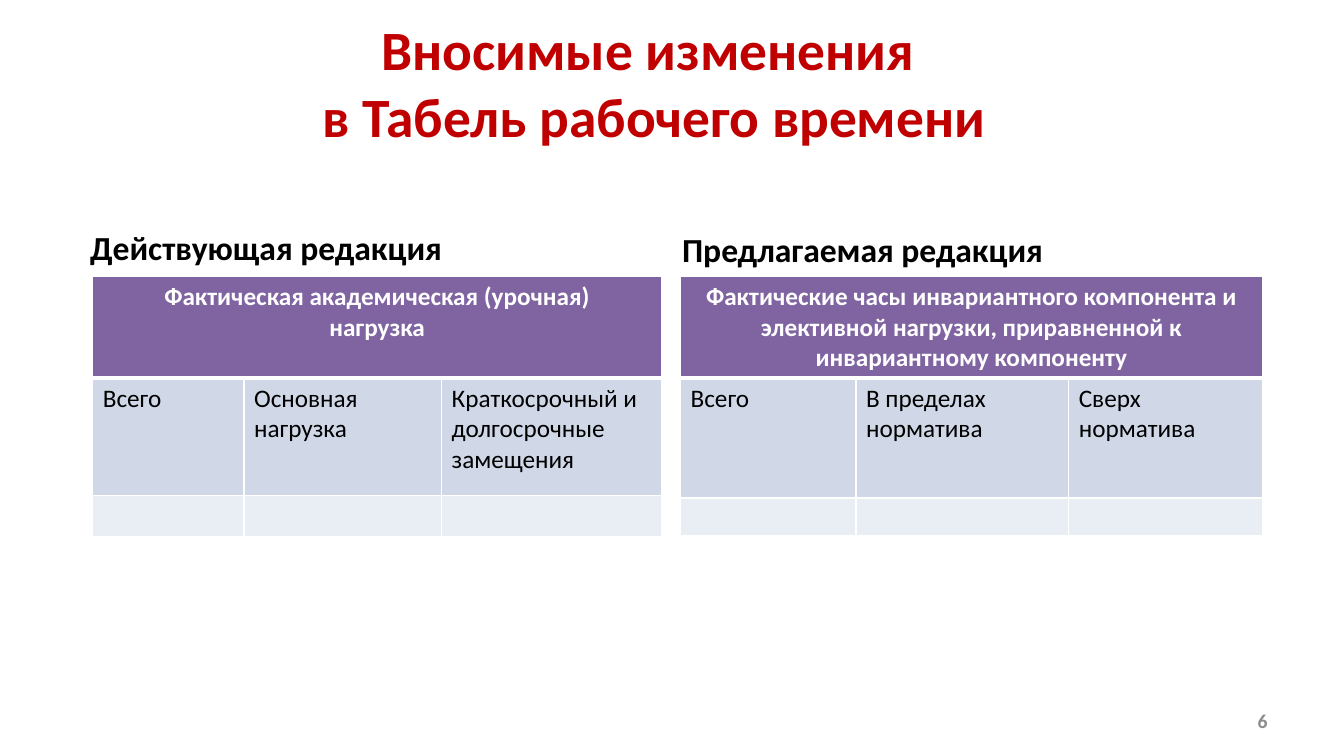
from dataclasses import dataclass

from lxml.etree import SubElement
from pptx import Presentation
from pptx.dml.color import RGBColor
from pptx.enum.text import MSO_ANCHOR, PP_ALIGN
from pptx.oxml.ns import qn
from pptx.slide import Slide
from pptx.table import _Cell
from pptx.text.text import _Paragraph
from pptx.util import Inches, Pt

FONT = "Calibri"
RED = RGBColor(0xC0, 0x00, 0x00)
BLACK = RGBColor(0x00, 0x00, 0x00)
WHITE = RGBColor(0xFF, 0xFF, 0xFF)
GRAY = RGBColor(0x8C, 0x8C, 0x8C)
PURPLE = RGBColor(0x80, 0x64, 0xA2)
BAND_DARK = RGBColor(0xD0, 0xD8, 0xE8)
BAND_LIGHT = RGBColor(0xE9, 0xED, 0xF4)


@dataclass(frozen=True)
class Label:
    lines: list[str]
    left: float
    top: float
    width: float
    height: float
    size: float
    color: RGBColor
    alignment: PP_ALIGN = PP_ALIGN.CENTER


@dataclass(frozen=True)
class Timesheet:
    left: float
    columns: list[float]
    rows: list[float]
    header: list[str]
    subheads: list[str]


LABELS = [
    Label(["Вносимые изменения ", "в Табель рабочего времени"],
          0.67, 0.3, 11.64, 1.02, 39.6, RED),
    Label(["Действующая редакция"], -0.13, 2.2, 5.54, 0.5, 24, BLACK),
    Label(["Предлагаемая редакция"], 5.61, 2.22, 5.89, 0.5, 24, BLACK),
    Label(["6"], 9.56, 6.95, 3.11, 0.4, 14, GRAY, PP_ALIGN.RIGHT),
]

TIMESHEETS = [
    Timesheet(0.92, [1.5, 1.96, 2.18], [1.01, 1.17, 0.4],
              ["Фактическая академическая (урочная)", "нагрузка"],
              ["Всего", "Основная нагрузка",
               "Краткосрочный и долгосрочные замещения"]),
    Timesheet(6.75, [1.74, 2.11, 1.92], [1.01, 1.19, 0.37],
              ["Фактические часы инвариантного компонента и элективной "
               "нагрузки, приравненной к инвариантному компоненту"],
              ["Всего", "В пределах норматива", "Сверх норматива"]),
]
TABLE_TOP = 2.74


def add_run(paragraph: _Paragraph, text: str, size: float,
            color: RGBColor, bold: bool = True) -> None:
    run = paragraph.add_run()
    run.text = text
    run.font.name = FONT
    run.font.size = Pt(size)
    run.font.bold = bold
    run.font.color.rgb = color


def add_label(slide: Slide, label: Label) -> None:
    shape = slide.shapes.add_textbox(
        Inches(label.left), Inches(label.top),
        Inches(label.width), Inches(label.height))
    frame = shape.text_frame
    frame.word_wrap = True
    frame.vertical_anchor = MSO_ANCHOR.MIDDLE
    paragraph = frame.paragraphs[0]
    paragraph.alignment = label.alignment
    for index, line in enumerate(label.lines):
        if index:
            paragraph.add_line_break()
        add_run(paragraph, line, label.size, label.color)


def style_cell(cell: _Cell, fill: RGBColor, bottom: float = 1, top: float = 1) -> None:
    properties = cell._tc.get_or_add_tcPr()
    for side, width in (("L", 1), ("R", 1), ("T", top), ("B", bottom)):
        line = SubElement(properties, qn(f"a:ln{side}"), w=str(Pt(width)))
        solid = SubElement(line, qn("a:solidFill"))
        SubElement(solid, qn("a:srgbClr"), val=str(WHITE))
    cell.fill.solid()
    cell.fill.fore_color.rgb = fill


def add_timesheet(slide: Slide, sheet: Timesheet) -> None:
    table = slide.shapes.add_table(
        len(sheet.rows), len(sheet.columns), Inches(sheet.left), Inches(TABLE_TOP),
        Inches(sum(sheet.columns)), Inches(sum(sheet.rows))).table
    for column, width in zip(table.columns, sheet.columns):
        column.width = Inches(width)
    for row, height in zip(table.rows, sheet.rows):
        row.height = Inches(height)

    # Header across all columns
    header = table.cell(0, 0)
    header.merge(table.cell(0, len(sheet.columns) - 1))
    for index, line in enumerate(sheet.header):
        frame = header.text_frame
        paragraph = frame.add_paragraph() if index else frame.paragraphs[0]
        paragraph.alignment = PP_ALIGN.CENTER
        add_run(paragraph, line, 18, WHITE)

    # Column captions and the empty row
    for index, caption in enumerate(sheet.subheads):
        style_cell(table.cell(0, index), PURPLE, bottom=3)
        subhead = table.cell(1, index)
        add_run(subhead.text_frame.paragraphs[0], caption, 18, BLACK, bold=False)
        style_cell(subhead, BAND_DARK, top=3)
        empty = table.cell(2, index)
        empty.margin_top = empty.margin_bottom = Inches(0.03)
        style_cell(empty, BAND_LIGHT)


def main() -> None:
    presentation = Presentation()
    presentation.slide_width = Inches(13.33)
    presentation.slide_height = Inches(7.5)
    slide = presentation.slides.add_slide(presentation.slide_layouts[6])
    for label in LABELS:
        add_label(slide, label)
    for sheet in TIMESHEETS:
        add_timesheet(slide, sheet)
    presentation.save("out.pptx")


if __name__ == "__main__":
    main()
